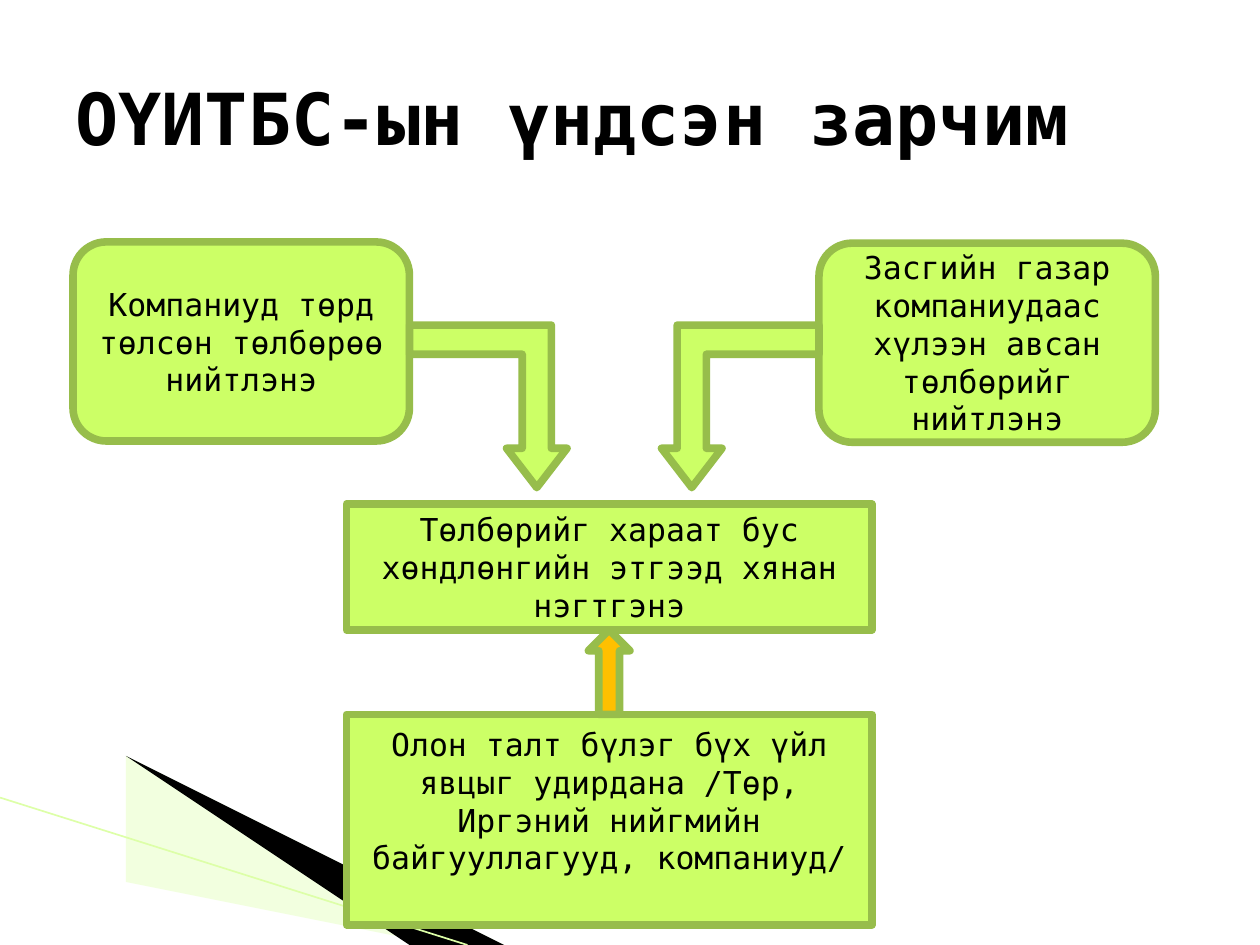
from typing import NamedTuple

from lxml import etree
from pptx import Presentation
from pptx.dml.color import RGBColor
from pptx.enum.shapes import MSO_CONNECTOR, MSO_SHAPE
from pptx.enum.text import MSO_ANCHOR, PP_ALIGN
from pptx.oxml.ns import qn
from pptx.util import Inches, Pt

ROUNDED = MSO_SHAPE.FLOWCHART_ALTERNATE_PROCESS
RECTANGLE = MSO_SHAPE.RECTANGLE
UP_ARROW = MSO_SHAPE.UP_ARROW
BENT_ARROW = MSO_SHAPE.BENT_UP_ARROW
STRAIGHT = MSO_CONNECTOR.STRAIGHT
LEFT, CENTER = PP_ALIGN.LEFT, PP_ALIGN.CENTER
MIDDLE = MSO_ANCHOR.MIDDLE

FONT = "DejaVu Sans Mono"
LIME, GREEN, ORANGE, BLACK = "CCFF66", "97BD4B", "FFC000", "000000"
PALE, PALE_LINE = "E0FFB0", "DDFFA8"


class Box(NamedTuple):
    kind: int
    left: float
    top: float
    width: float
    height: float
    text: str
    bottom_inset: float = 0.05


class Arrow(NamedTuple):
    kind: int
    left: float
    top: float
    width: float
    height: float
    fill: str = LIME
    rotation: int = 0
    mirrored: bool = False
    adjustments: tuple[float, ...] = ()


class Wedge(NamedTuple):
    points: tuple[tuple[float, float], ...]
    fill: str
    opacity: int = 100


WEDGES = (
    Wedge(((0.55, 6.51), (5.95, 7.5), (4.56, 7.5), (0.55, 6.5)), PALE, 40),
    Wedge(((0.53, 6.49), (4.57, 7.5), (3.72, 7.5), (0.54, 6.5)), BLACK),
)
BOXES = (
    Box(ROUNDED, 0.58, 1.92, 2.67, 1.58, "Компаниуд төрд төлсөн төлбөрөө нийтлэнэ"),
    Box(ROUNDED, 6.5, 1.93, 2.67, 1.58,
        "Засгийн газар компаниудаас хүлээн авсан төлбөрийг нийтлэнэ"),
    Box(RECTANGLE, 2.75, 4, 4.17, 1,
        "Төлбөрийг хараат бус хөндлөнгийн этгээд хянан нэгтгэнэ"),
    Box(RECTANGLE, 2.75, 5.67, 4.17, 1.67,
        "Олон талт бүлэг бүх үйл явцыг удирдана /Төр, Иргэний нийгмийн "
        "байгууллагууд, компаниуд/", bottom_inset=0.35),
)
BEND = (0.185, 0.192, 0.25)
ARROWS = (
    Arrow(UP_ARROW, 4.67, 5, 0.33, 0.67, fill=ORANGE),
    Arrow(BENT_ARROW, 5.25, 2.58, 1.25, 1.29, rotation=180, adjustments=BEND),
    Arrow(BENT_ARROW, 3.25, 2.58, 1.25, 1.29, rotation=180, mirrored=True,
          adjustments=BEND),
)


def color(value: str) -> RGBColor:
    return RGBColor.from_string(value)


def write(shape, text: str, *, size: float, bold: bool = False, align=LEFT,
          bottom_inset: float = 0.05) -> None:
    frame = shape.text_frame
    frame.word_wrap = True
    frame.vertical_anchor = MIDDLE
    frame.margin_bottom = Inches(bottom_inset)
    paragraph = frame.paragraphs[0]
    paragraph.alignment = align
    run = paragraph.add_run()
    run.text = text
    run.font.name = FONT
    run.font.size = Pt(size)
    run.font.bold = bold
    run.font.color.rgb = color(BLACK)


def draw_outlined(slide, item: Box | Arrow, fill: str):
    shape = slide.shapes.add_shape(item.kind, Inches(item.left), Inches(item.top),
                                   Inches(item.width), Inches(item.height))
    shape.shadow.inherit = False
    shape.fill.solid()
    shape.fill.fore_color.rgb = color(fill)
    shape.line.color.rgb = color(GREEN)
    shape.line.width = Pt(4.33)
    etree.SubElement(shape.line._get_or_add_ln(), qn("a:round"))
    return shape


def draw_box(slide, box: Box) -> None:
    shape = draw_outlined(slide, box, LIME)
    write(shape, box.text, size=18, align=CENTER, bottom_inset=box.bottom_inset)


def draw_arrow(slide, arrow: Arrow) -> None:
    shape = draw_outlined(slide, arrow, arrow.fill)
    shape.rotation = arrow.rotation
    for index, value in enumerate(arrow.adjustments):
        shape.adjustments[index] = value
    if arrow.mirrored:
        shape._element.spPr.find(qn("a:xfrm")).set("flipH", "1")


def draw_wedge(slide, wedge: Wedge) -> None:
    start, *others = wedge.points
    builder = slide.shapes.build_freeform(*start, scale=Inches(1))
    builder.add_line_segments(others, close=True)
    shape = builder.convert_to_shape()
    shape.shadow.inherit = False
    shape.fill.solid()
    shape.fill.fore_color.rgb = color(wedge.fill)
    shape.line.fill.background()
    if wedge.opacity < 100:
        tint = shape._element.spPr.find(f"{qn('a:solidFill')}/{qn('a:srgbClr')}")
        etree.SubElement(tint, qn("a:alpha")).set("val", str(wedge.opacity * 1000))


def main() -> None:
    deck = Presentation()
    deck.slide_width, deck.slide_height = Inches(10), Inches(7.5)
    slide = deck.slides.add_slide(deck.slide_layouts[6])

    # Corner decoration
    for wedge in WEDGES:
        draw_wedge(slide, wedge)
    edge = slide.shapes.add_connector(STRAIGHT, Inches(0), Inches(6.33),
                                      Inches(3.71), Inches(7.5))
    edge.line.color.rgb = color(PALE_LINE)
    edge.line.width = Pt(0.95)
    etree.SubElement(edge._element.spPr, qn("a:effectLst"))

    # Title
    title = slide.shapes.add_textbox(Inches(0.5), Inches(0.3), Inches(9), Inches(1.25))
    write(title, "ОҮИТБС-ын үндсэн зарчим", size=41, bold=True)

    # Process boxes and the arrows between them
    for box in BOXES:
        draw_box(slide, box)
    for arrow in ARROWS:
        draw_arrow(slide, arrow)

    deck.save("out.pptx")


if __name__ == "__main__":
    main()
